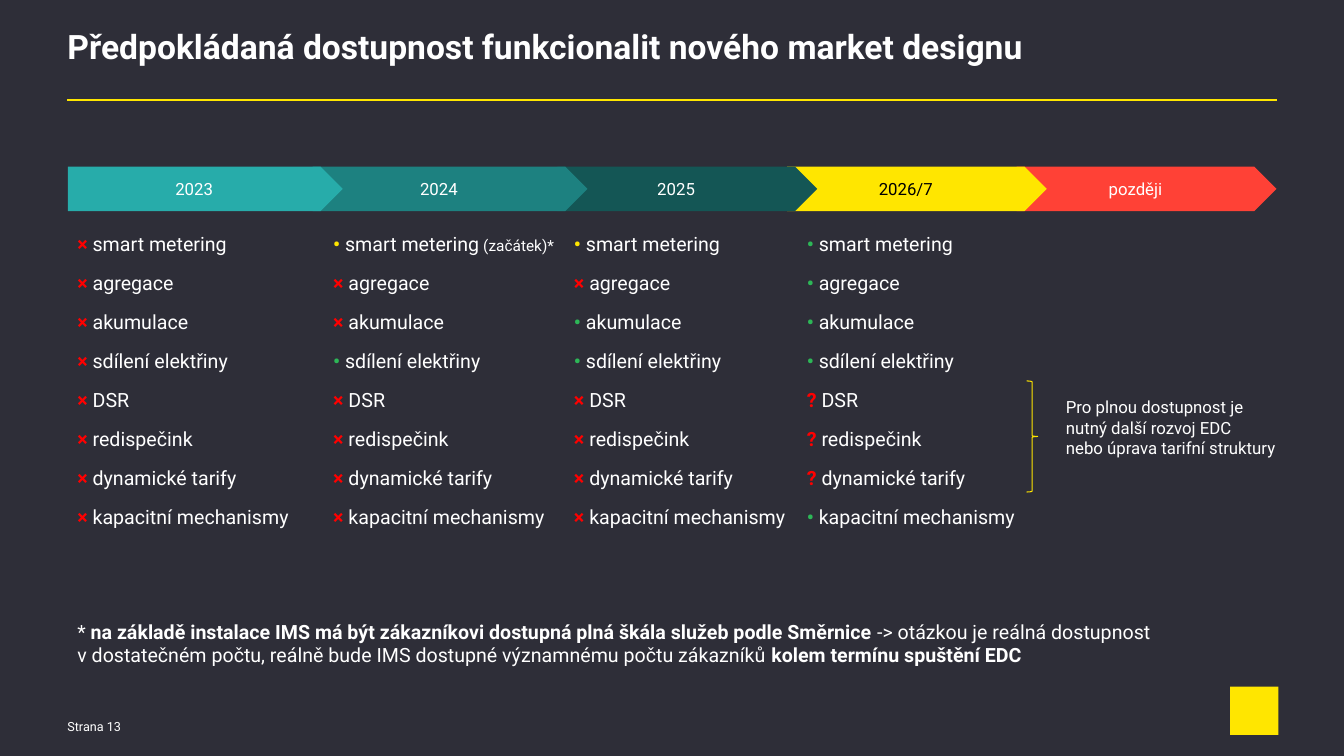
from pptx import Presentation
from pptx.dml.color import RGBColor
from pptx.enum import shapes, text
from pptx.util import Cm, Pt

# Content
TITLE = "Předpokládaná dostupnost funkcionalit nového market designu"
FUNCTIONS = ["smart metering", "agregace", "akumulace", "sdílení elektřiny",
             "DSR", "redispečink", "dynamické tarify", "kapacitní mechanismy"]
# Year, arrow width (cm), fill, label colour
PERIODS = [("2023", 6.93, "aqua", "white"), ("2024", 6.93, "teal", "white"),
           ("2025", 6.55, "pine", "white"), ("2026/7", 6.55, "yellow", "black"),
           ("později", 6.55, "coral", "white")]
# List left edge (cm), one mark per function, note after the first function
# x = unavailable, p = partial, o = available, ? = uncertain
AVAILABILITY = [(1.7, "xxxxxxxx", ""), (8.15, "pxxoxxxx", " (začátek)*"),
                (14.22, "pxooxxxx", ""), (20.09, "oooo???o", "")]
MARKS = {"x": ("×", "red"), "p": ("•", "yellow"), "o": ("•", "green"), "?": ("?", "red")}
FOOTNOTE = [
    ("* ", False),
    ("na základě instalace IMS má být zákazníkovi dostupná plná škála služeb podle Směrnice ", True),
    ("-> otázkou je reálná dostupnost ", False),
    ("\n", False),
    ("v dostatečném počtu, reálně bude IMS dostupné významnému počtu zákazníků ", False),
    ("kolem termínu spuštění EDC", True)]
BRACE_NOTE = "Pro plnou dostupnost je nutný další rozvoj EDC \vnebo úprava tarifní struktury"
PAGE = "Strana 13"

COLORS = {"background": "2E2E38", "white": "FFFFFF", "black": "000000",
          "yellow": "FFE600", "red": "FF0000", "green": "2DB757", "aqua": "27ACAA",
          "teal": "1D8180", "pine": "145655", "coral": "FF4136"}
FONT = "Roboto"
LEFT, RIGHT = 1.7, 32.18
ARROW_TOP, ARROW_HEIGHT, ARROW_OVERLAP = 4.2, 1.12, 0.76


def color(name):
    return RGBColor.from_string(COLORS[name])


def style(run, size, name="white", bold=False):
    run.font.name, run.font.size, run.font.bold = FONT, Pt(size), bold
    run.font.color.rgb = color(name)


def add_run(paragraph, words, size, name="white", bold=False):
    run = paragraph.add_run()
    run.text = words
    style(run, size, name, bold)


def add_text(left, top, width, height, insets=None):
    frame = slide.shapes.add_textbox(Cm(left), Cm(top), Cm(width), Cm(height)).text_frame
    frame.word_wrap = True
    if insets:
        (frame.margin_left, frame.margin_top,
         frame.margin_right, frame.margin_bottom) = map(Cm, insets)
    return frame


def add_plain(kind, left, top, width, height, fill=None):
    shape = slide.shapes.add_shape(kind, Cm(left), Cm(top), Cm(width), Cm(height))
    shape.shadow.inherit = False
    shape.line.fill.background()
    if fill:
        shape.fill.solid()
        shape.fill.fore_color.rgb = color(fill)
    else:
        shape.fill.background()
    return shape


prs = Presentation()
prs.slide_width, prs.slide_height = Cm(33.88), Cm(19.05)
slide = prs.slides.add_slide(prs.slide_layouts[5])
slide.background.fill.solid()
slide.background.fill.fore_color.rgb = color("background")

# Title and rule below it
title = slide.shapes.title
title.left, title.top, title.width, title.height = Cm(LEFT), Cm(0.81), Cm(30.5), Cm(1.65)
heading = title.text_frame
heading.text = TITLE
heading.margin_left = heading.margin_top = heading.margin_right = heading.margin_bottom = 0
heading.vertical_anchor = text.MSO_ANCHOR.TOP
heading.auto_size = text.MSO_AUTO_SIZE.NONE
heading.paragraphs[0].alignment = text.PP_ALIGN.LEFT
heading.paragraphs[0].line_spacing = 0.85
style(heading.paragraphs[0].runs[0], 24, bold=True)

rule = slide.shapes.add_connector(shapes.MSO_CONNECTOR.STRAIGHT,
                                  Cm(LEFT), Cm(2.52), Cm(RIGHT), Cm(2.52))
rule.line.color.rgb = color("yellow")
rule.line.width = Pt(1.5)
properties = rule._element.spPr
properties.append(properties.makeelement(
    "{http://schemas.openxmlformats.org/drawingml/2006/main}effectLst", {}))

# Timeline arrows, the earliest on top
arrow_left = RIGHT
for year, width, fill, label in reversed(PERIODS):
    arrow_left -= width
    arrow = add_plain(shapes.MSO_SHAPE.RIGHT_ARROW, arrow_left, ARROW_TOP,
                      width, ARROW_HEIGHT, fill)
    arrow.adjustments[0], arrow.adjustments[1] = 1, 0.5
    arrow.text_frame.text = year
    arrow.text_frame.vertical_anchor = text.MSO_ANCHOR.MIDDLE
    arrow.text_frame.paragraphs[0].alignment = text.PP_ALIGN.CENTER
    style(arrow.text_frame.paragraphs[0].runs[0], 12, label)
    arrow_left += ARROW_OVERLAP

# Availability lists
for left, codes, note in AVAILABILITY:
    availability = add_text(left, 5.72, 6.35, 7.8)
    for row, (function, code) in enumerate(zip(FUNCTIONS, codes)):
        entry = availability.paragraphs[0] if row == 0 else availability.add_paragraph()
        entry.space_before, entry.space_after = Pt(5), Pt(6)
        mark, mark_color = MARKS[code]
        add_run(entry, mark + " ", 14, mark_color, True)
        add_run(entry, function, 14)
        if row == 0 and note:
            add_run(entry, note, 11)

# Footnote
footnote = add_text(LEFT, 15.49, 29.7, 1.45).paragraphs[0]
footnote.space_before, footnote.space_after = Pt(5), Pt(6)
for words, bold in FOOTNOTE:
    if words == "\n":
        footnote.add_line_break()
    else:
        add_run(footnote, words, 14, bold=bold)

# Brace and its note
brace = add_plain(shapes.MSO_SHAPE.RIGHT_BRACE, 25.88, 9.6, 0.28, 2.8)
brace.line.color.rgb = color("yellow")
brace.line.width = Pt(0.75)

# Brace note and page number
for words, box, size, spacing in [(BRACE_NOTE, (26.87, 9.91, 5.35, 2.16), 12, 1),
                                  (PAGE, (LEFT, 18.08, 2.08, 0.43), 9, 0.85)]:
    frame = add_text(*box, insets=(0, 0.1, 0, 0))
    frame.text = words
    frame.paragraphs[0].line_spacing = spacing
    frame.paragraphs[0].space_after = Pt(6)
    for run in frame.paragraphs[0].runs:
        style(run, size)

# Plain corner emblem
add_plain(shapes.MSO_SHAPE.RECTANGLE, 31.01, 17.3, 1.22, 1.22, "yellow")

prs.save("out.pptx")
